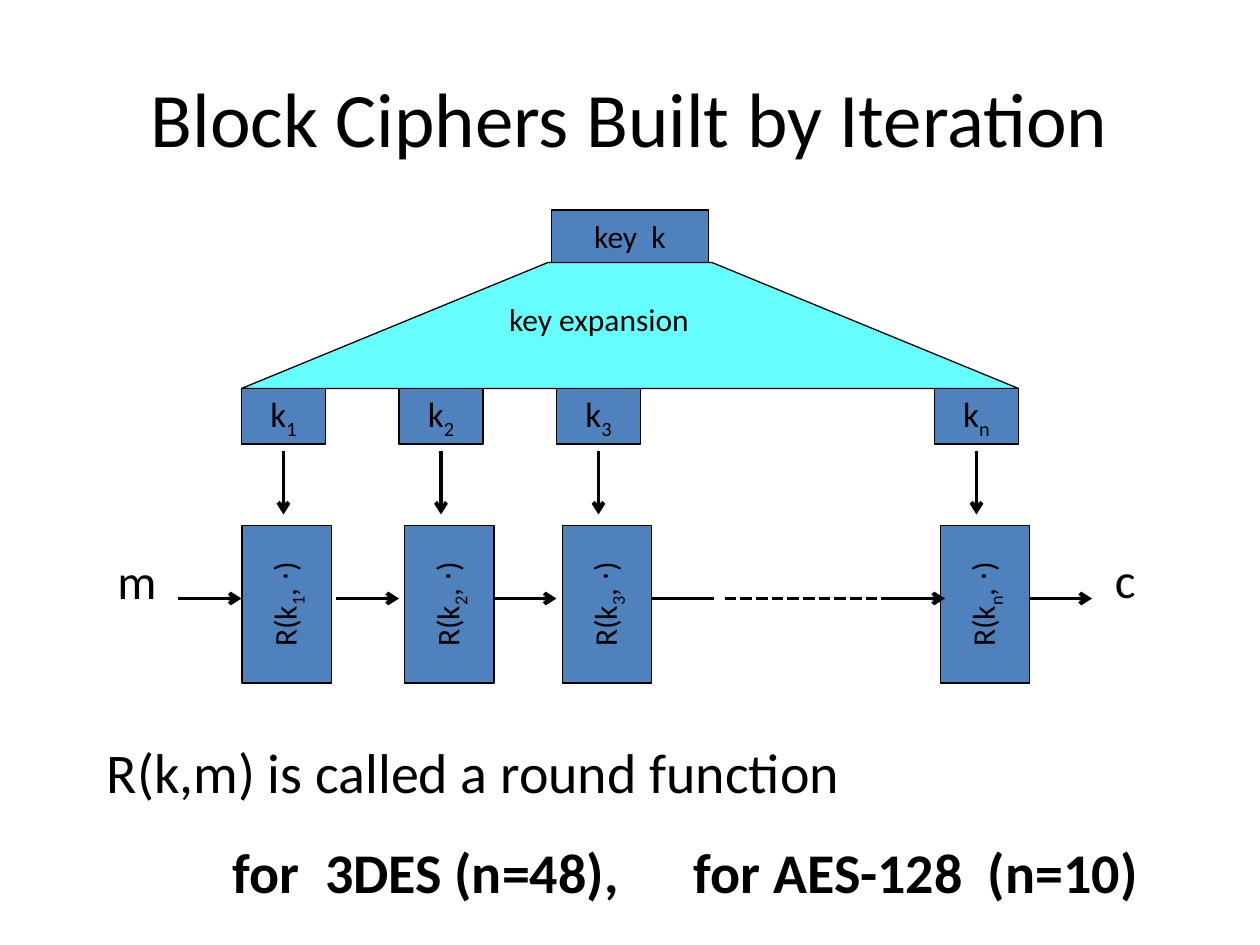
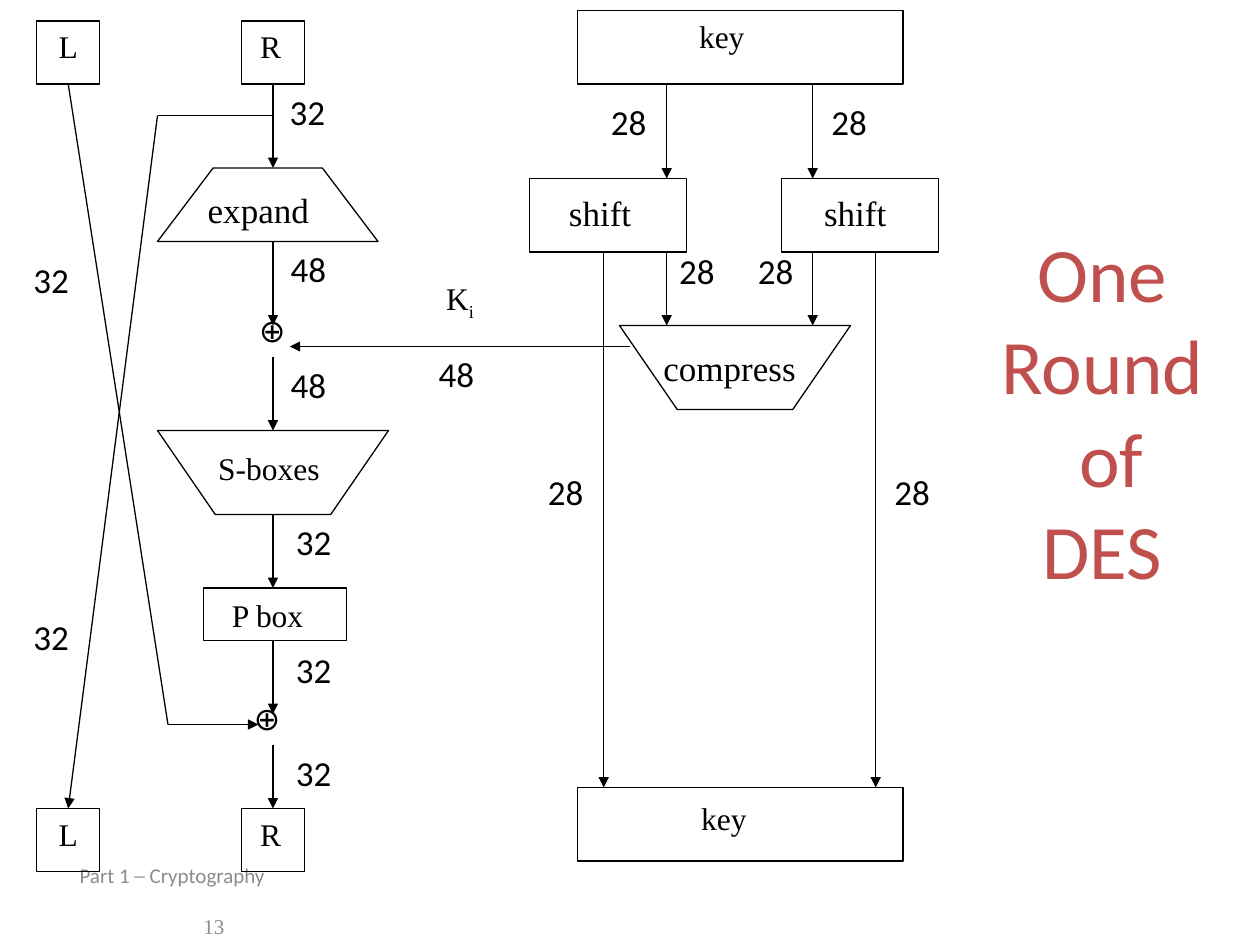
import pptx
import pptx.util
import pptx.dml.color
import pptx.enum.dml
import pptx.enum.shapes
import pptx.enum.text
import pptx.oxml.ns
from lxml import etree

PX = 7620  # EMU in one px, 120 px to the inch
BLACK = pptx.dml.color.RGBColor(0x00, 0x00, 0x00)
BLUE = pptx.dml.color.RGBColor(0x4F, 0x81, 0xBD)
CYAN = pptx.dml.color.RGBColor(0x66, 0xFF, 0xFF)
RED = pptx.dml.color.RGBColor(0xC0, 0x50, 0x4D)
GREY = pptx.dml.color.RGBColor(0x8C, 0x8C, 0x8C)
SANS, SERIF = "Calibri", "Times New Roman"
TITLE_SIZE = 44
SHAPE = pptx.enum.shapes.MSO_SHAPE
ANCHOR = pptx.enum.text.MSO_ANCHOR
CENTER = pptx.enum.text.PP_ALIGN.CENTER
qn = pptx.oxml.ns.qn


def emu(*lengths):
    return [pptx.util.Emu(v * PX) for v in lengths]


def add_runs(p, parts, size, font=SANS, color=BLACK, bold=False):
    """Write parts as runs; every second part is a subscript."""
    for i, part in enumerate(parts):
        r = p.add_run()
        r.text = part
        r.font.size = pptx.util.Pt(size)
        r.font.name = font
        r.font.color.rgb = color
        r.font.bold = bold
        if i % 2:
            r._r.get_or_add_rPr().set("baseline", "-25000")


def add_box(s, x, y, w, h):
    """Add a wrapping text box and return its text frame."""
    tf = s.shapes.add_textbox(*emu(x, y, w, h)).text_frame
    tf.word_wrap = True
    return tf


def add_label(s, x, y, w, h, parts, size, font=SANS):
    """Add one line of text that does not wrap."""
    tf = add_box(s, x, y, w, h)
    tf.word_wrap = False
    tf.auto_size = pptx.enum.text.MSO_AUTO_SIZE.SHAPE_TO_FIT_TEXT
    add_runs(tf.paragraphs[0], parts, size, font)


def add_title(s, box, lines, color=BLACK):
    tf = add_box(s, *box)
    tf.vertical_anchor = ANCHOR.MIDDLE
    for i, line in enumerate(lines):
        p = tf.add_paragraph() if i else tf.paragraphs[0]
        p.alignment = CENTER
        add_runs(p, [line], TITLE_SIZE, color=color)


def style_shape(sp, fill=None):
    sp.shadow.inherit = False
    sp.line.color.rgb = BLACK
    sp.line.width = pptx.util.Pt(0.75)
    if fill is None:
        sp.fill.background()
    else:
        sp.fill.solid()
        sp.fill.fore_color.rgb = fill


def add_block(s, x, y, w, h, fill=None, parts=(), size=18, kind=SHAPE.RECTANGLE):
    sp = s.shapes.add_shape(kind, *emu(x, y, w, h))
    style_shape(sp, fill)
    if parts:
        sp.text_frame.vertical_anchor = ANCHOR.MIDDLE
        p = sp.text_frame.paragraphs[0]
        p.alignment = CENTER
        add_runs(p, parts, size)
    return sp


def add_funnel(s, x, y, w, h, inset):
    """Outline a trapezoid from its wide side at y to its narrow side at y + h."""
    fb = s.shapes.build_freeform(x, y, scale=float(PX))
    fb.add_line_segments([(x + inset, y + h), (x + w - inset, y + h), (x + w, y)])
    style_shape(fb.convert_to_shape())


def add_line(s, x1, y1, x2, y2, width=0.75, head="triangle", dash=None):
    sp = s.shapes.add_connector(
        pptx.enum.shapes.MSO_CONNECTOR.STRAIGHT, *emu(x1, y1, x2, y2))
    sp.line.color.rgb = BLACK
    sp.line.width = pptx.util.Pt(width)
    if dash:
        sp.line.dash_style = dash
    if head:
        etree.SubElement(sp.line._get_or_add_ln(), qn("a:tailEnd"), type=head)
    etree.SubElement(sp._element.spPr, qn("a:effectLst"))


def add_tab_stops(p, *stops):
    tabs = etree.SubElement(p._p.get_or_add_pPr(), qn("a:tabLst"))
    for stop in stops:
        etree.SubElement(tabs, qn("a:tab"), pos=str(stop * PX), algn="l")


def add_footer(s, caption, number):
    tf = add_box(s, 60, 834, 280, 48)
    tf.vertical_anchor = ANCHOR.MIDDLE
    p = tf.paragraphs[0]
    p._p.get_or_add_pPr().set("marL", str(4 * PX))
    add_runs(p, [caption], 12, color=GREY)
    p = tf.add_paragraph()
    p.space_before = pptx.util.Pt(14.5)
    p._p.get_or_add_pPr().set("marL", str(122 * PX))
    add_runs(p, [number], 12, SERIF, GREY)


def build_iteration_slide(s):
    add_title(s, (60, 36, 1080, 150), ["Block Ciphers Built by Iteration"])

    tf = add_box(s, 90, 697, 1070, 180)
    p = tf.paragraphs[0]
    p.space_before = pptx.util.Pt(6.4)
    add_runs(p, ["R(k,m) is called a round function"], 32)
    p = tf.add_paragraph()
    p.space_before = pptx.util.Pt(18.2)
    add_tab_stops(p, 120, 559)
    add_runs(p, ["\tfor  3DES (n=48),\tfor AES-128  (n=10)"], 32, bold=True)

    add_block(s, 525, 200, 150, 50, BLUE, ["key  k"])
    expansion = add_block(s, 230, 250, 740, 120, CYAN, kind=SHAPE.TRAPEZOID)
    expansion.adjustments[0] = 2.433
    add_label(s, 473, 280, 199, 48, ["key expansion"], 18)

    # index, centre of the round key, centre of the round
    rounds = [("1", 270, 273), ("2", 420, 428), ("3", 570, 578), ("n", 930, 938)]
    for index, key_x, round_x in rounds:
        add_block(s, key_x - 40, 370, 80, 53, BLUE, ["k", index], 20)
        sp = add_block(s, round_x - 75, 533, 150, 85, BLUE, ["R(k", index, ", ⋅)"])
        sp.rotation = 270
        add_line(s, key_x, 430, key_x, 490, 2.25, "arrow")

    flow_y = 570
    for x in (170, 320, 470, 840, 980):
        add_line(s, x, flow_y, x + 60, flow_y, 2.25, "arrow")
    add_line(s, 620, flow_y, 680, flow_y, 2.25, None)
    add_line(s, 690, flow_y, 840, flow_y, 2.25, None,
             pptx.enum.dml.MSO_LINE.SQUARE_DOT)
    add_label(s, 100, 518, 62, 68, ["m"], 28)
    add_label(s, 1050, 517, 50, 68, ["c"], 28)


def build_des_round_slide(s):
    add_footer(s, "Part 1 ─ Cryptography", "13")

    for y in (20, 770):
        add_block(s, 35, y, 60, 60)
        add_block(s, 230, y, 60, 60)
        add_label(s, 44, y, 47, 60, ["L"], 18, SERIF)
        add_label(s, 236, y, 53, 60, ["R"], 18, SERIF)
    for box in [(550, 10, 310, 70), (550, 750, 310, 70),
                (504, 170, 150, 70), (744, 170, 150, 70), (194, 560, 136, 50)]:
        add_block(s, *box)
    add_funnel(s, 150, 230, 210, -70, 53)
    for x, y, w in [(590, 310, 220), (150, 410, 220)]:
        add_funnel(s, x, y, w, 80, 55)

    names = [
        (654, 10, 86, 60, "key", 18), (656, 755, 86, 60, "key", 18),
        (530, 176, 85, 52, "shift", 20), (773, 176, 85, 52, "shift", 20),
        (186, 174, 133, 52, "expand", 20), (620, 324, 169, 52, "compress", 20),
        (196, 422, 134, 48, "S-boxes", 18), (209, 562, 101, 48, "P box", 18),
    ]
    for x, y, w, h, name, size in names:
        add_label(s, x, y, w, h, [name], size, SERIF)
    add_label(s, 413, 260, 56, 60, ["K", "i"], 18, SERIF)

    right_half = [(80, 160), (230, 310), (340, 410), (490, 560), (610, 680), (710, 770)]
    for y1, y2 in right_half:
        add_line(s, 260, y1, 260, y2)
    for x in (635, 774):
        add_line(s, x, 80, x, 170)
        add_line(s, x, 240, x, 310)
    for x in (575, 834):
        add_line(s, x, 240, x, 750)
    add_line(s, 600, 330, 276, 330)
    add_line(s, 65, 80, 160, 690, head=None)
    add_line(s, 160, 690, 246, 690)
    add_line(s, 260, 110, 150, 110, head=None)
    add_line(s, 150, 110, 65, 770)

    bit_counts = {
        "28": [(840, 442), (510, 442), (780, 90), (570, 90), (710, 232), (635, 232)],
        "32": [(264, 80), (270, 490), (270, 612), (270, 710), (20, 240), (20, 580)],
        "48": [(406, 330), (265, 230), (265, 340)],
    }
    for bits, places in bit_counts.items():
        for x, y in places:
            add_label(s, x, y, 65, 59, [bits], 20)
    for x, y in [(235, 290), (230, 660)]:
        add_label(s, x, y, 55, 60, ["⊕"], 18)

    add_title(s, (930, 180, 240, 421), ["One", "Round", " of", "DES"], RED)


def main():
    prs = pptx.Presentation()
    prs.slide_width, prs.slide_height = emu(1200, 900)
    for build in (build_iteration_slide, build_des_round_slide):
        build(prs.slides.add_slide(prs.slide_layouts[6]))
    prs.save("out.pptx")


if __name__ == "__main__":
    main()
